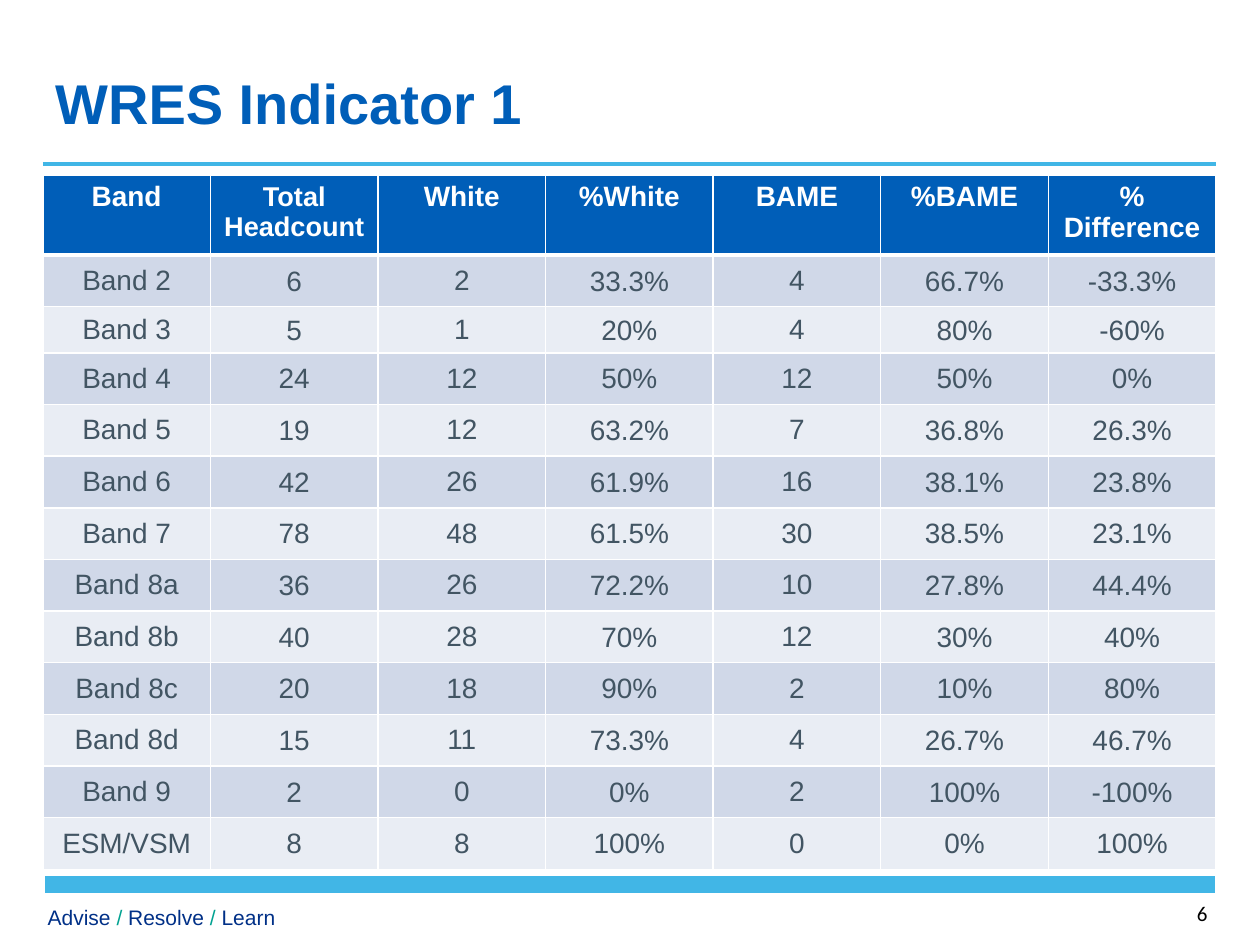
from lxml import etree
from pptx import Presentation
from pptx.dml.color import RGBColor
from pptx.enum import shapes, text
from pptx.oxml import ns
from pptx.util import Inches, Pt

BLUE = RGBColor(0x00, 0x5E, 0xB8)
SKY = RGBColor(0x41, 0xB6, 0xE6)
NAVY = RGBColor(0x00, 0x30, 0x87)
TEAL = RGBColor(0x00, 0xA2, 0x91)
SLATE = RGBColor(0x42, 0x55, 0x63)
WHITE = RGBColor(0xFF, 0xFF, 0xFF)
BLACK = RGBColor(0x00, 0x00, 0x00)
DARK = RGBColor(0xD0, 0xD8, 0xE8)
LIGHT = RGBColor(0xE9, 0xED, 0xF4)

HEADS = ["Band", "Total Headcount", "White", "%White", "BAME", "%BAME", "% Difference"]
BANDS = [
    ("Band 2", "6", "2", "33.3%", "4", "66.7%", "-33.3%"),
    ("Band 3", "5", "1", "20%", "4", "80%", "-60%"),
    ("Band 4", "24", "12", "50%", "12", "50%", "0%"),
    ("Band 5", "19", "12", "63.2%", "7", "36.8%", "26.3%"),
    ("Band 6", "42", "26", "61.9%", "16", "38.1%", "23.8%"),
    ("Band 7", "78", "48", "61.5%", "30", "38.5%", "23.1%"),
    ("Band 8a", "36", "26", "72.2%", "10", "27.8%", "44.4%"),
    ("Band 8b", "40", "28", "70%", "12", "30%", "40%"),
    ("Band 8c", "20", "18", "90%", "2", "10%", "80%"),
    ("Band 8d", "15", "11", "73.3%", "4", "26.7%", "46.7%"),
    ("Band 9", "2", "0", "0%", "2", "100%", "-100%"),
    ("ESM/VSM", "8", "8", "100%", "0", "0%", "100%"),
]
PADDED = (0, 2, 4)


def add_run(para, words, size, color, bold=False, face="Arial"):
    run = para.add_run()
    run.text = words
    font = run.font
    font.name, font.size, font.bold = face, Pt(size), bold
    font.color.rgb = color


def add_label(slide, box, runs, size, bold=False, face="Arial", wrap=True,
              anchor=text.MSO_ANCHOR.TOP):
    frame = slide.shapes.add_textbox(*map(Inches, box)).text_frame
    frame.word_wrap = wrap
    frame.vertical_anchor = anchor
    for words, color in runs:
        add_run(frame.paragraphs[0], words, size, color, bold, face)


def add_rule(slide, left, right, y, width):
    line = slide.shapes.add_connector(
        shapes.MSO_CONNECTOR.STRAIGHT, Inches(left), Inches(y), Inches(right), Inches(y))
    line.line.color.rgb = SKY
    line.line.width = Pt(width)
    etree.SubElement(line._element.spPr, ns.qn("a:effectLst"))


def add_edges(cell, base):
    props = cell._tc.get_or_add_tcPr()
    for spot, (side, width) in enumerate(zip("LRTB", (1, 1, 1, base))):
        edge = etree.Element(ns.qn("a:ln" + side), w=str(Pt(width)))
        fill = etree.SubElement(edge, ns.qn("a:solidFill"))
        etree.SubElement(fill, ns.qn("a:srgbClr"), val=str(WHITE))
        props.insert(spot, edge)


def fill_cell(cell, words, size, color, back, bold, base):
    cell.fill.solid()
    cell.fill.fore_color.rgb = back
    para = cell.text_frame.paragraphs[0]
    para.alignment = text.PP_ALIGN.CENTER
    add_run(para, words, size, color, bold)
    add_edges(cell, base)


def add_header(slide, left, top, width):
    add_label(slide, (left, top, 7.57, 0.74), [("WRES Indicator 1", BLUE)], 32,
              bold=True, anchor=text.MSO_ANCHOR.MIDDLE)
    add_rule(slide, left, left + width, top + 0.86, 2)


def add_bands(slide, left, top, width, height):
    grid = slide.shapes.add_table(
        len(BANDS) + 1, len(HEADS), *map(Inches, (left, top, width, height))).table
    for col in grid.columns:
        col.width = Inches(width / len(HEADS))
    for row in grid.rows:
        row.height = Inches(0.41)
    grid.rows[2].height = Inches(0.31)
    for c, words in enumerate(HEADS):
        size = 15.5 if c == 1 else 16
        fill_cell(grid.cell(0, c), words, size, WHITE, BLUE, True, 3)
    for r, band in enumerate(BANDS, 1):
        for c, words in enumerate(band):
            cell = grid.cell(r, c)
            fill_cell(cell, words, 16, SLATE, DARK if r % 2 else LIGHT, False, 1)
            cell.vertical_anchor = text.MSO_ANCHOR.MIDDLE
            if c not in PADDED:
                cell.margin_left = cell.margin_right = cell.margin_top = Inches(0.01)
                cell.margin_bottom = 0


def add_footer(slide, left, top, width):
    add_rule(slide, left, left + width, top, 10)
    motto = [("Advise ", NAVY), ("/", TEAL), (" Resolve ", NAVY), ("/", TEAL), (" Learn", NAVY)]
    add_label(slide, (left - 0.08, top + 0.11, 2.48, 0.3), motto, 12, wrap=False)
    add_label(slide, (left + width - 0.24, top + 0.08, 0.55, 0.4), [("6", BLACK)], 12,
              face="Calibri")


def main():
    deck = Presentation()
    deck.slide_width, deck.slide_height = Inches(10), Inches(7.5)
    slide = deck.slides.add_slide(deck.slide_layouts[6])
    add_header(slide, 0.34, 0.44, 9.31)
    add_bands(slide, 0.34, 1.39, 9.31, 5.46)
    add_footer(slide, 0.36, 7.02, 9.28)
    deck.save("out.pptx")


if __name__ == "__main__":
    main()
